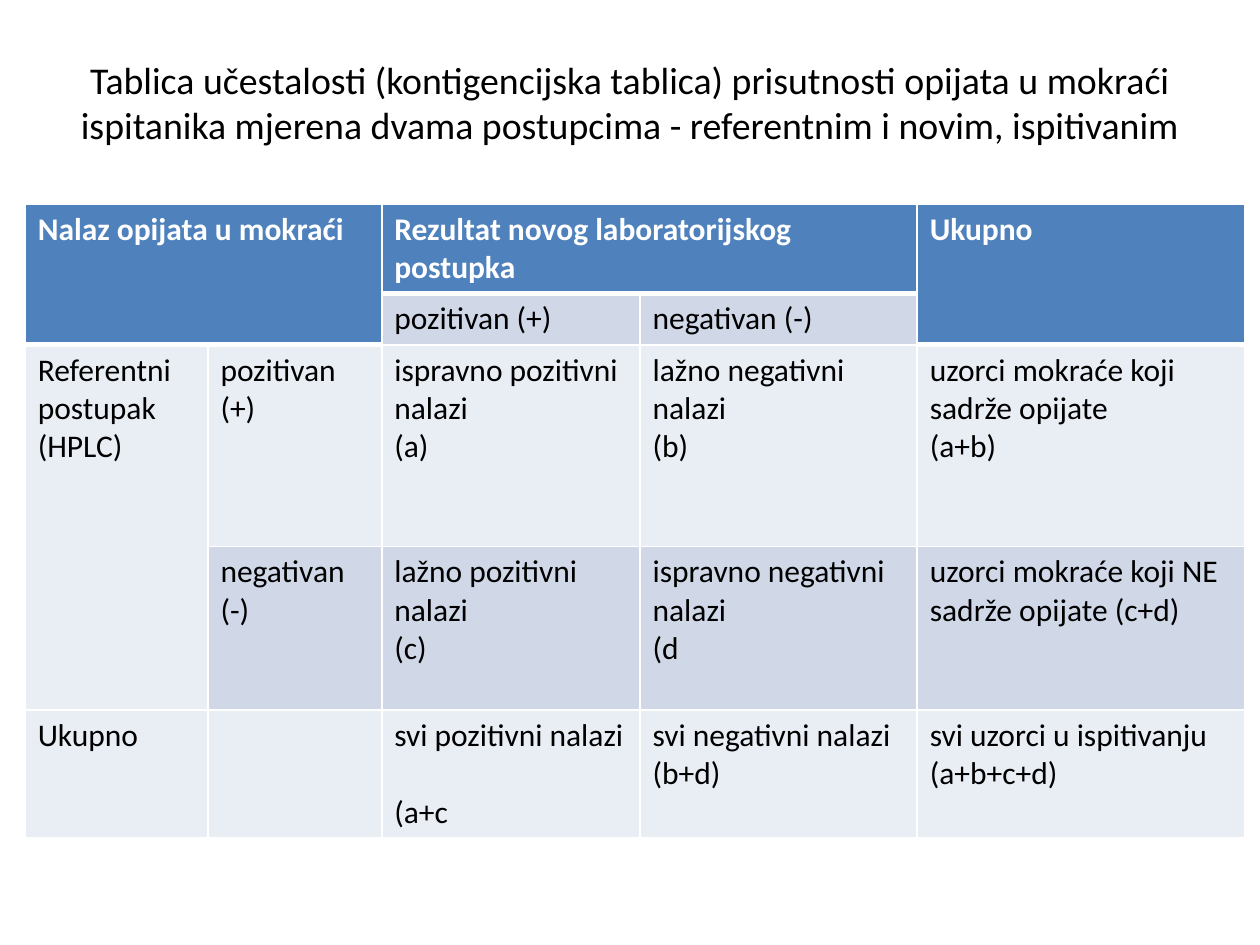
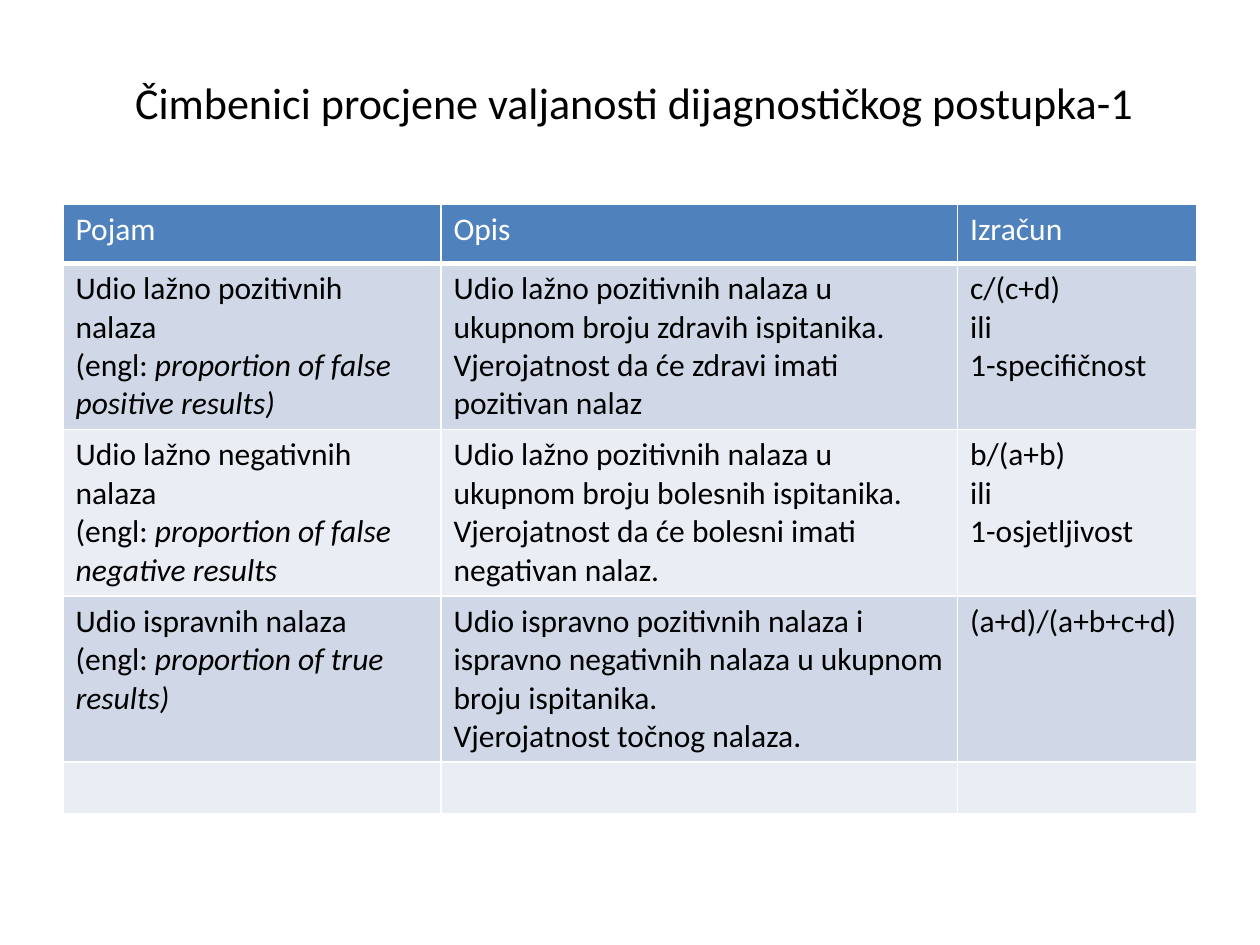
from lxml import etree
from pptx import Presentation
from pptx import util as u
from pptx.dml.color import RGBColor
from pptx.enum import text
from pptx.oxml import ns

FONT = "Calibri"
WHITE, BLACK = "FFFFFF", "000000"
HEADER, BAND_DARK, BAND_LIGHT = "4F81BD", "D0D8E8", "E9EDF4"
TABLE_TOP = 1.62

# A cell is a list of paragraphs; "\n" breaks a line and *...* marks italics.
FREQUENCY_ROWS = [
    [["Nalaz opijata u mokraći"], [], ["Rezultat novog laboratorijskog postupka"], [], ["Ukupno"]],
    [[], [], ["pozitivan (+)"], ["negativan (-)"], []],
    [["Referentni postupak (HPLC)"], ["pozitivan (+)"], ["ispravno pozitivni nalazi \n(a)"],
     ["lažno negativni nalazi \n(b)"], ["uzorci mokraće koji sadrže opijate \n(a+b)"]],
    [[], ["negativan (-)"], ["lažno pozitivni nalazi \n(c)"],
     ["ispravno negativni nalazi \n(d"], ["uzorci mokraće koji NE sadrže opijate (c+d)"]],
    [["Ukupno"], [], ["svi pozitivni nalazi \n(a+c"],
     ["svi negativni nalazi \n(b+d)"], ["svi uzorci u ispitivanju (a+b+c+d)"]],
]
FREQUENCY_MERGES = [((0, 0), (1, 1)), ((0, 2), (0, 3)), ((0, 4), (1, 4)), ((2, 0), (3, 0))]

FACTOR_ROWS = [
    [["Pojam"], ["Opis"], ["Izračun"]],
    [["Udio lažno pozitivnih nalaza", "(engl: *proportion of false positive results)*"],
     ["Udio lažno pozitivnih nalaza u ukupnom broju zdravih ispitanika.",
      "Vjerojatnost da će zdravi imati pozitivan nalaz"],
     ["c/(c+d)", "ili", "1-specifičnost"]],
    [["Udio lažno negativnih nalaza", "(engl: *proportion of false negative results*"],
     ["Udio lažno pozitivnih nalaza u ukupnom broju bolesnih ispitanika.",
      "Vjerojatnost da će bolesni imati negativan nalaz."],
     ["b/(a+b)", "ili", "1-osjetljivost"]],
    [["Udio ispravnih nalaza", "(engl: *proportion of true results)*"],
     ["Udio ispravno pozitivnih nalaza i ispravno negativnih nalaza u ukupnom broju ispitanika.",
      "Vjerojatnost točnog nalaza."],
     ["(a+d)/(a+b+c+d)"]],
    [[], [], []],
]


def rgb(color):
    return RGBColor.from_string(color)


def add_run(paragraph, words, size, color, bold=False, italic=False):
    run = paragraph.add_run()
    run.text = words
    font = run.font
    font.name, font.size, font.bold, font.italic = FONT, u.Pt(size), bold, italic
    font.color.rgb = rgb(color)


def add_title(slide, words, size, width):
    box = slide.shapes.add_textbox(u.Inches(0.5), u.Inches(0.3), u.Inches(width), u.Inches(1.25))
    frame = box.text_frame
    frame.word_wrap = True
    frame.vertical_anchor = text.MSO_ANCHOR.MIDDLE
    frame.margin_bottom = u.Inches(0.28)
    title = frame.paragraphs[0]
    title.alignment = text.PP_ALIGN.CENTER
    add_run(title, words, size, BLACK)


def set_borders(cell, bottom_width):
    """Draw white lines around the cell; widths are in points."""
    properties = cell._tc.get_or_add_tcPr()
    for side, width in (("L", 1), ("R", 1), ("T", 1), ("B", bottom_width)):
        line = etree.SubElement(properties, ns.qn(f"a:ln{side}"), w=str(u.Pt(width)))
        fill = etree.SubElement(line, ns.qn("a:solidFill"))
        etree.SubElement(fill, ns.qn("a:srgbClr"), val=WHITE)


def fill_cell(cell, paragraphs, color, bold):
    frame = cell.text_frame
    for index, content in enumerate(paragraphs):
        paragraph = frame.add_paragraph() if index else frame.paragraphs[0]
        for line_number, line in enumerate(content.split("\n")):
            if line_number:
                paragraph.add_line_break()
            for part_number, part in enumerate(line.split("*")):
                if part:
                    add_run(paragraph, part, 18, color, bold, italic=part_number % 2 == 1)


def add_banded_table(slide, left, widths, heights, rows, merges=(), bold_header=False):
    frame = slide.shapes.add_table(
        len(rows), len(widths), u.Inches(left), u.Inches(TABLE_TOP),
        u.Inches(sum(widths)), u.Inches(sum(heights)))
    table = frame.table
    for column, width in zip(table.columns, widths):
        column.width = u.Inches(width)
    for row, height in zip(table.rows, heights):
        row.height = u.Inches(height)
    for start, end in merges:
        table.cell(*start).merge(table.cell(*end))
    for r, row in enumerate(rows):
        is_header = r == 0
        band = HEADER if is_header else BAND_DARK if r % 2 else BAND_LIGHT
        for c, paragraphs in enumerate(row):
            cell = table.cell(r, c)
            set_borders(cell, bottom_width=3 if is_header else 1)
            cell.fill.solid()
            cell.fill.fore_color.rgb = rgb(band)
            fill_cell(cell, paragraphs, WHITE if is_header else BLACK, is_header and bold_header)


def main():
    deck = Presentation()
    deck.slide_width, deck.slide_height = u.Inches(10), u.Inches(7.5)
    blank = deck.slide_layouts[6]

    frequency = deck.slides.add_slide(blank)
    add_banded_table(frequency, 0.2, [1.45, 1.38, 2.05, 2.2, 2.6], [0.7, 0.4, 1.6, 1.3, 1],
                     FREQUENCY_ROWS, FREQUENCY_MERGES, bold_header=True)
    add_title(frequency, "Tablica učestalosti (kontigencijska tablica) prisutnosti opijata u mokraći "
              "ispitanika mjerena dvama postupcima - referentnim i novim, ispitivanim", 21.6, 9)

    factors = deck.slides.add_slide(blank)
    add_banded_table(factors, 0.5, [3, 4.1, 1.9], [0.47, 1.32, 1.32, 1.32, 0.41], FACTOR_ROWS)
    add_title(factors, "Čimbenici procjene valjanosti dijagnostičkog postupka-1", 25.2, 9.07)

    deck.save("out.pptx")


if __name__ == "__main__":
    main()
